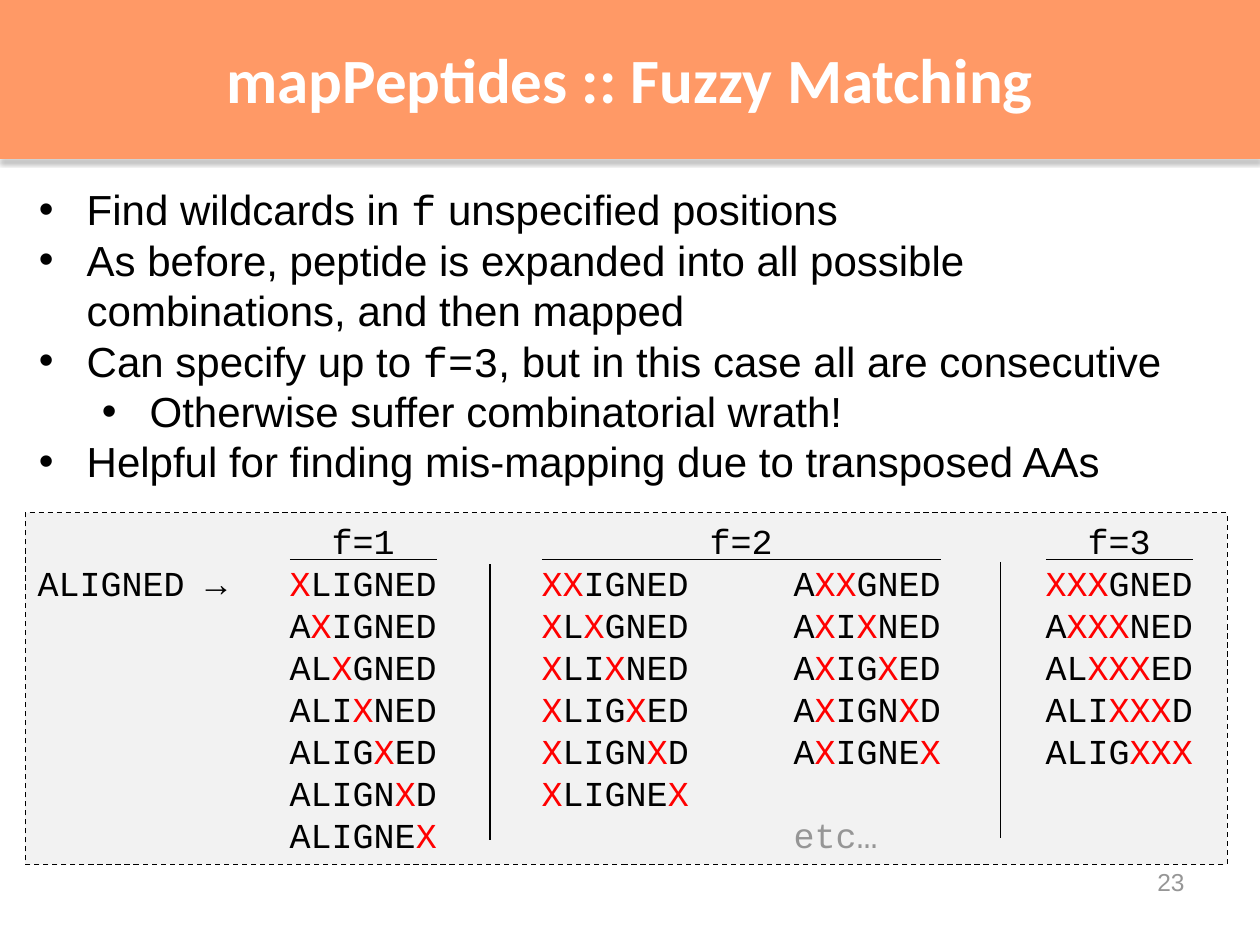
"""Build the slide on fuzzy matching of peptides."""
import itertools

import pptx
import pptx.dml.color
import pptx.enum.dml
import pptx.enum.shapes
import pptx.enum.text
import pptx.oxml
import pptx.util
from pptx.util import Inches

SPACE = 'xmlns:a="http://schemas.openxmlformats.org/drawingml/2006/main"'
ALIGN = pptx.enum.text.PP_ALIGN
BLACK, RED, GREY, ORANGE = "000000", "FF0000", "969696", "FF9966"
SANS, MONO = "Arial", "Courier New"
POINTS = [
    (0.38, ["Find wildcards in ", "f", " unspecified positions"]),
    (0.38, ["As before, peptide is expanded into all possible "
            "combinations, and then mapped"]),
    (0.38, ["Can specify up to ", "f=3",
            ", but in this case all are consecutive"]),
    (0.88, ["Otherwise suffer combinatorial wrath!"]),
    (0.38, ["Helpful for finding mis-mapping due to transposed AAs"]),
]
HEADS = [("f=1", 2, 1.17), ("f=2", 4, 3.17), ("f=3", 8, 1.17)]
STOPS = [2, 4, 6, 8]
ROWS = [
    "ALIGNED →\tXLIGNED\tXXIGNED\tAXXGNED\tXXXGNED",
    "\tAXIGNED\tXLXGNED\tAXIXNED\tAXXXNED",
    "\tALXGNED\tXLIXNED\tAXIGXED\tALXXXED",
    "\tALIXNED\tXLIGXED\tAXIGNXD\tALIXXXD",
    "\tALIGXED\tXLIGNXD\tAXIGNEX\tALIGXXX",
    "\tALIGNXD\tXLIGNEX",
    "\tALIGNEX\t\t",
]


def tint(code):
    """Turn a hex string into a colour."""
    return pptx.dml.color.RGBColor.from_string(code)


def put(item, values):
    """Set each named value on an item."""
    for name, value in values.items():
        setattr(item, name, value)


def write(para, text, face, size, color=BLACK, bold=False):
    """Add one formatted run to a paragraph."""
    run = para.add_run()
    run.text = text
    put(run.font, {"name": face, "size": pptx.util.Pt(size), "bold": bold})
    run.font.color.rgb = tint(color)


def add_xml(parent, tag, inner=""):
    """Append a small drawing element to its parent."""
    parent.append(pptx.oxml.parse_xml(f"<a:{tag} {SPACE}{inner}"))


def set_tabs(para, places, kind):
    """Left-align a paragraph and give it tab stops of one kind."""
    para.alignment = ALIGN.LEFT
    stops = "".join(f'<a:tab pos="{Inches(place)}" algn="{kind}"/>'
                    for place in places)
    add_xml(para._p.get_or_add_pPr(), "tabLst", f">{stops}</a:tabLst>")


def add_box(slide, left, top, width, height):
    """Add a wrapping text box and return it."""
    box = slide.shapes.add_textbox(*map(Inches, (left, top, width, height)))
    box.text_frame.word_wrap = True
    return box


def add_line(slide, start, end, color=BLACK, width=0.75, effect="/>"):
    """Draw a straight line with the given effect list."""
    line = slide.shapes.add_connector(
        pptx.enum.shapes.MSO_CONNECTOR.STRAIGHT, *map(Inches, start + end))
    line.line.color.rgb = tint(color)
    line.line.width = pptx.util.Pt(width)
    add_xml(line._element.spPr, "effectLst", effect)
    return line


def add_head(slide, text, left, top, width, height):
    """Place the title band and its shaded lower edge."""
    shade = ('><a:outerShdw blurRad="39370" dist="20320" dir="5400000">'
             '<a:srgbClr val="000000"><a:alpha val="38000"/></a:srgbClr>'
             '</a:outerShdw></a:effectLst>')
    base = top + height
    edge = add_line(slide, (left, base), (left + width, base),
                    ORANGE, 2, shade)
    title = slide.shapes.title
    title._element.addprevious(edge._element)
    put(title, {"left": Inches(left), "top": Inches(top),
                "width": Inches(width), "height": Inches(height)})
    title.fill.solid()
    title.fill.fore_color.rgb = tint(ORANGE)
    put(title.text_frame, {
        "vertical_anchor": pptx.enum.text.MSO_ANCHOR.MIDDLE,
        "auto_size": pptx.enum.text.MSO_AUTO_SIZE.NONE, "word_wrap": True})
    para = title.text_frame.paragraphs[0]
    para.alignment = ALIGN.CENTER
    write(para, text, "Calibri", 36, "FFFFFF", True)


def add_points(slide, left, top, width, height):
    """Place the bullet list, with code words in a fixed pitch."""
    frame = add_box(slide, left, top, width, height).text_frame
    for index, (indent, parts) in enumerate(POINTS):
        para = frame.add_paragraph() if index else frame.paragraphs[0]
        props = para._p.get_or_add_pPr()
        props.set("marL", str(Inches(indent)))
        props.set("indent", str(Inches(-0.38)))
        add_xml(props, "buFont", ' typeface="Arial"/>')
        add_xml(props, "buChar", ' char="•"/>')
        for place, part in enumerate(parts):
            write(para, part, MONO if place % 2 else SANS, 24)


def add_panel(slide, left, top, width, height):
    """Place the panel of expanded peptides, its rules and dividers."""
    panel = slide.shapes.add_shape(
        pptx.enum.shapes.MSO_SHAPE.RECTANGLE,
        *map(Inches, (left, top, width, height)))
    panel.shadow.inherit = False
    panel.fill.solid()
    panel.fill.fore_color.rgb = tint("F2F2F2")
    panel.line.color.rgb = tint(BLACK)
    put(panel.line, {"width": pptx.util.Pt(0.75),
                     "dash_style": pptx.enum.dml.MSO_LINE.DASH})
    frame = panel.text_frame
    put(frame, {"word_wrap": True, "margin_left": Inches(0.1),
                "vertical_anchor": pptx.enum.text.MSO_ANCHOR.TOP})
    para = frame.paragraphs[0]
    set_tabs(para, [start + span / 2 for _, start, span in HEADS], "ctr")
    for name, start, span in HEADS:
        write(para, "\t" + name, MONO, 20)
        begin = left + 0.1 + start
        add_line(slide, (begin, top + 0.37), (begin + span, top + 0.37),
                 width=1)
    for row in ROWS:
        para = frame.add_paragraph()
        set_tabs(para, STOPS, "l")
        for wild, group in itertools.groupby(row, lambda sign: sign == "X"):
            write(para, "".join(group), MONO, 20, RED if wild else BLACK)
    write(para, "etc…", MONO, 20, GREY)
    for across, down in ((3.69, 0.41), (7.74, 0.39)):
        add_line(slide, (left + across, top + down),
                 (left + across, top + down + 2.19))


def add_page(slide, number, left, top, width, height):
    """Place the page number at the right."""
    para = add_box(slide, left, top, width, height).text_frame.paragraphs[0]
    para.alignment = ALIGN.RIGHT
    write(para, number, SANS, 14, GREY)


def main():
    """Build and save the slide."""
    deck = pptx.Presentation()
    put(deck, {"slide_width": Inches(10), "slide_height": Inches(7.5)})
    slide = deck.slides.add_slide(deck.slide_layouts[5])
    add_head(slide, "mapPeptides :: Fuzzy Matching", 0, 0, 10, 1.25)
    add_page(slide, "23", 7.17, 6.83, 2.33, 0.52)
    add_points(slide, 0.21, 1.41, 9.61, 2.52)
    add_panel(slide, 0.2, 4.07, 9.54, 2.79)
    deck.save("out.pptx")


if __name__ == "__main__":
    main()
